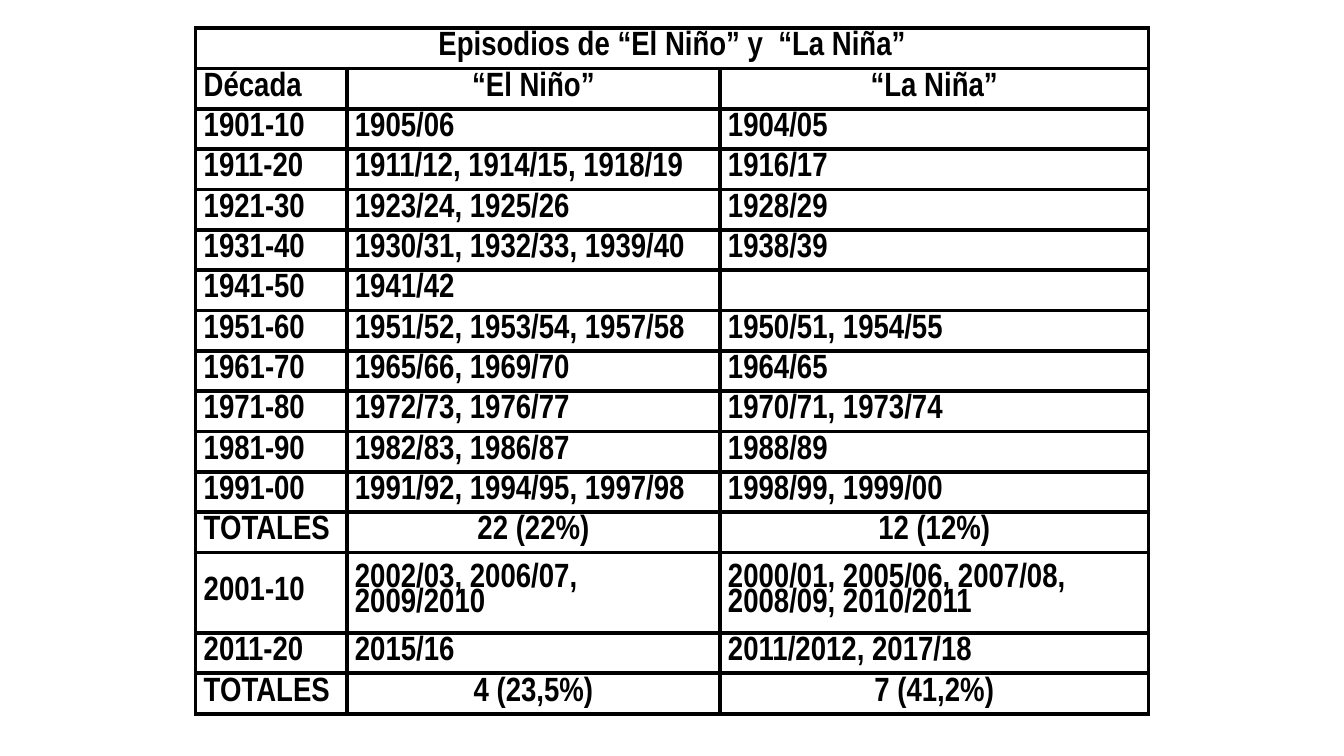
from lxml.etree import SubElement
from pptx import Presentation
from pptx.dml.color import RGBColor
from pptx.enum.text import MSO_ANCHOR, PP_ALIGN
from pptx.oxml.ns import qn
from pptx.util import Inches, Pt

HEADING = "Episodios de “El Niño” y  “La Niña”"
COLUMN_HEADS = ("Década", "“El Niño”", "“La Niña”")
TOTALS = "TOTALES"
EPISODES = [
    ("1901-10", "1905/06", "1904/05"),
    ("1911-20", "1911/12, 1914/15, 1918/19", "1916/17"),
    ("1921-30", "1923/24, 1925/26", "1928/29"),
    ("1931-40", "1930/31, 1932/33, 1939/40", "1938/39"),
    ("1941-50", "1941/42", ""),
    ("1951-60", "1951/52, 1953/54, 1957/58", "1950/51, 1954/55"),
    ("1961-70", "1965/66, 1969/70", "1964/65"),
    ("1971-80", "1972/73, 1976/77", "1970/71, 1973/74"),
    ("1981-90", "1982/83, 1986/87", "1988/89"),
    ("1991-00", "1991/92, 1994/95, 1997/98", "1998/99, 1999/00"),
    (TOTALS, "22 (22%)", "12 (12%)"),
    ("2001-10", "2002/03, 2006/07, 2009/2010",
     "2000/01, 2005/06, 2007/08, 2008/09, 2010/2011"),
    ("2011-20", "2015/16", "2011/2012, 2017/18"),
    (TOTALS, "4 (23,5%)", "7 (41,2%)"),
]
ROWS = [(HEADING, "", ""), COLUMN_HEADS, *EPISODES]
CENTRED_ROWS = (COLUMN_HEADS[0], TOTALS)
TWO_LINE_DECADE = "2001-10"

COLORS = {"ink": "000000"}
FONT, FONT_SIZE = "Arial Narrow", Pt(24)
LEFT, TOP = 1.94, 0.28
COLUMN_WIDTHS = (1.5, 3.7, 4.25)
LINE_HEIGHT = 0.4
BORDER = Pt(3)


def add_borders(cell):
    properties = cell._tc.get_or_add_tcPr()
    for side in ("a:lnL", "a:lnR", "a:lnT", "a:lnB"):
        line = SubElement(properties, qn(side), w=str(BORDER))
        ink = SubElement(line, qn("a:solidFill"))
        SubElement(ink, qn("a:srgbClr"), val=COLORS["ink"])


def fill_cell(cell, text, centred):
    add_borders(cell)
    cell.fill.background()
    cell.margin_left = cell.margin_right = Inches(0.08)
    cell.margin_top = cell.margin_bottom = 0
    cell.vertical_anchor = MSO_ANCHOR.MIDDLE
    cell.text = text
    paragraph = cell.text_frame.paragraphs[0]
    paragraph.alignment = PP_ALIGN.CENTER if centred else PP_ALIGN.LEFT
    paragraph.line_spacing = 0.8
    font = paragraph.font
    font.name, font.size, font.bold = FONT, FONT_SIZE, True
    font.color.rgb = RGBColor.from_string(COLORS["ink"])


def main():
    deck = Presentation()
    deck.slide_width, deck.slide_height = Inches(13.33), Inches(7.5)
    slide = deck.slides.add_slide(deck.slide_layouts[6])

    row_heights = [LINE_HEIGHT * (2 if row[0] == TWO_LINE_DECADE else 1)
                   for row in ROWS]
    table = slide.shapes.add_table(
        len(ROWS), len(COLUMN_WIDTHS), Inches(LEFT), Inches(TOP),
        Inches(sum(COLUMN_WIDTHS)), Inches(sum(row_heights))).table
    table.first_row = table.horz_banding = False

    for column, width in zip(table.columns, COLUMN_WIDTHS):
        column.width = Inches(width)
    for r, (row, height) in enumerate(zip(ROWS, row_heights)):
        table.rows[r].height = Inches(height)
        for c, text in enumerate(row):
            centred = text == HEADING or (c > 0 and row[0] in CENTRED_ROWS)
            fill_cell(table.cell(r, c), text, centred)
    table.cell(0, 0).merge(table.cell(0, len(COLUMN_WIDTHS) - 1))

    deck.save("out.pptx")


if __name__ == "__main__":
    main()
